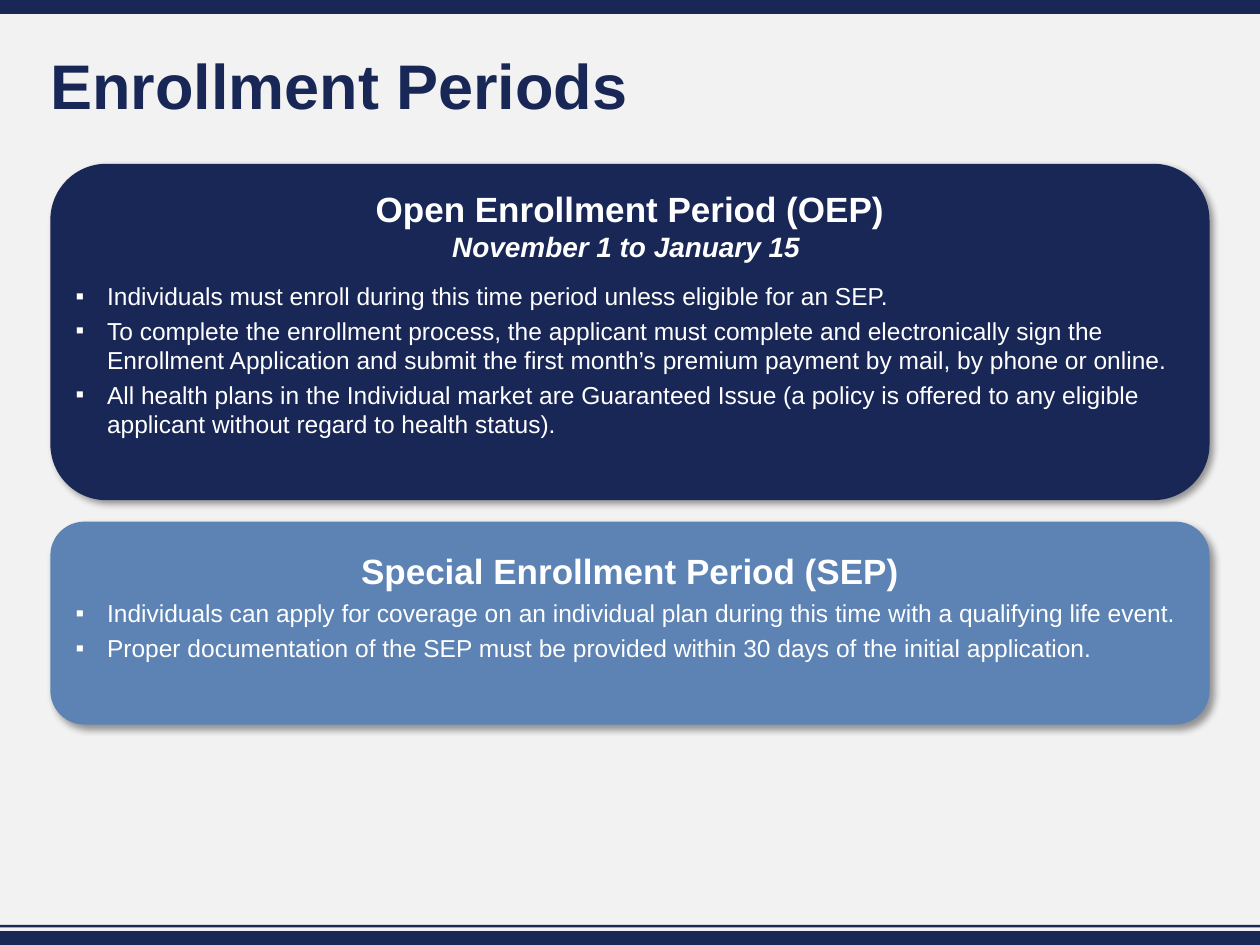
import pptx
import pptx.dml.color
import pptx.enum.shapes
import pptx.enum.text
import pptx.oxml
import pptx.oxml.ns
import pptx.util
from pptx.util import Inches

NAVY = pptx.dml.color.RGBColor(0x19, 0x27, 0x57)
BLUE = pptx.dml.color.RGBColor(0x5D, 0x83, 0xB5)
WHITE = pptx.dml.color.RGBColor(0xFF, 0xFF, 0xFF)
PALE = pptx.dml.color.RGBColor(0xF2, 0xF2, 0xF2)

SHAPE = pptx.enum.shapes.MSO_SHAPE
ANCHOR = pptx.enum.text.MSO_ANCHOR
ALIGN = pptx.enum.text.PP_ALIGN
NS = pptx.oxml.ns.nsdecls("a")

TITLE = {"size": pptx.util.Pt(36), "bold": True}
HEADING = {"size": pptx.util.Pt(20), "bold": True}
DATES = {"size": pptx.util.Pt(16), "bold": True, "italic": True}
BODY = {"size": pptx.util.Pt(14)}

OEP_BULLETS = [
    "Individuals must enroll during this time period unless eligible for an SEP.",
    "To complete the enrollment process, the applicant must complete and electronically sign the "
    "Enrollment Application and submit the first month’s premium payment by mail, by phone or online.",
    "All health plans in the Individual market are Guaranteed Issue (a policy is offered to any "
    "eligible applicant without regard to health status).",
]
SEP_BULLETS = [
    "Individuals can apply for coverage on an individual plan during this time with a qualifying life event.",
    "Proper documentation of the SEP must be provided within 30 days of the initial application.",
]


class Deck:
    """Holds the font style and the current slide, and draws each kind of element."""

    def __init__(self, slide, font_name="Arial"):
        self.s = slide
        self.font_name = font_name

    def background(self, color):
        fill = self.s.background.fill
        fill.solid()
        fill.fore_color.rgb = color

    def block(self, kind, box, color):
        sp = self.s.shapes.add_shape(kind, *map(Inches, box))
        sp.shadow.inherit = False
        sp.fill.solid()
        sp.fill.fore_color.rgb = color
        sp.line.fill.background()
        return sp

    def card(self, box, color):
        sp = self.block(SHAPE.ROUNDED_RECTANGLE, box, color)
        effects = sp.element.spPr.find(pptx.oxml.ns.qn("a:effectLst"))
        effects.append(pptx.oxml.parse_xml(
            f'<a:outerShdw {NS} blurRad="50800" dist="38100" dir="2700000" algn="tl" rotWithShape="0">'
            '<a:srgbClr val="000000"><a:alpha val="40000"/></a:srgbClr></a:outerShdw>'))

    def frame(self, box, inset=True, anchor=ANCHOR.TOP):
        tf = self.s.shapes.add_textbox(*map(Inches, box)).text_frame
        tf.word_wrap = True
        tf.vertical_anchor = anchor
        if not inset:
            tf.margin_left = tf.margin_top = tf.margin_right = tf.margin_bottom = 0
        return tf

    def paragraph(self, tf, i, text, style, color):
        p = tf.paragraphs[0] if i == 0 else tf.add_paragraph()
        r = p.add_run()
        r.text = text
        for name, value in {"name": self.font_name, **style}.items():
            setattr(r.font, name, value)
        r.font.color.rgb = color
        return p

    def title(self, box, text):
        tf = self.frame(box, inset=False, anchor=ANCHOR.MIDDLE)
        self.paragraph(tf, 0, text, TITLE, NAVY).line_spacing = 0.9

    def heading(self, box, lines):
        tf = self.frame(box)
        for i, (text, style) in enumerate(lines):
            self.paragraph(tf, i, text, style, WHITE).alignment = ALIGN.CENTER

    def bullets(self, box, items):
        tf = self.frame(box, inset=False)
        for i, text in enumerate(items):
            p = self.paragraph(tf, i, text, BODY, WHITE)
            p.level = 1
            p.space_after = pptx.util.Pt(3)
            pPr = p._p.get_or_add_pPr()
            pPr.set("marL", str(Inches(0.25)))
            pPr.set("indent", str(Inches(-0.25)))
            pPr.append(pptx.oxml.parse_xml(f'<a:buFont {NS} typeface="{self.font_name}"/>'))
            pPr.append(pptx.oxml.parse_xml(f'<a:buChar {NS} char="▪"/>'))


def main():
    prs = pptx.Presentation()
    prs.slide_width, prs.slide_height = Inches(10), Inches(7.5)
    deck = Deck(prs.slides.add_slide(prs.slide_layouts[6]))
    deck.background(PALE)
    for top, height in ((0, 0.11), (7.39, 0.11), (7.34, 0.02)):
        deck.block(SHAPE.RECTANGLE, (0, top, 10, height), NAVY)
    deck.card((0.4, 4.14, 9.2, 1.61), BLUE)
    deck.card((0.4, 1.3, 9.2, 2.67), NAVY)
    deck.heading((0.6, 1.44, 8.8, 0.71), [
        ("Open Enrollment Period (OEP)", HEADING),
        ("November 1 to January 15 ", DATES),
    ])
    deck.bullets((0.6, 2.23, 8.8, 1.26), OEP_BULLETS)
    deck.heading((1.38, 4.31, 7.24, 0.44), [("Special Enrollment Period (SEP)", HEADING)])
    deck.bullets((0.6, 4.75, 8.8, 0.51), SEP_BULLETS)
    deck.title((0.4, 0.4, 9.2, 0.62), "Enrollment Periods")
    prs.save("out.pptx")


if __name__ == "__main__":
    main()
